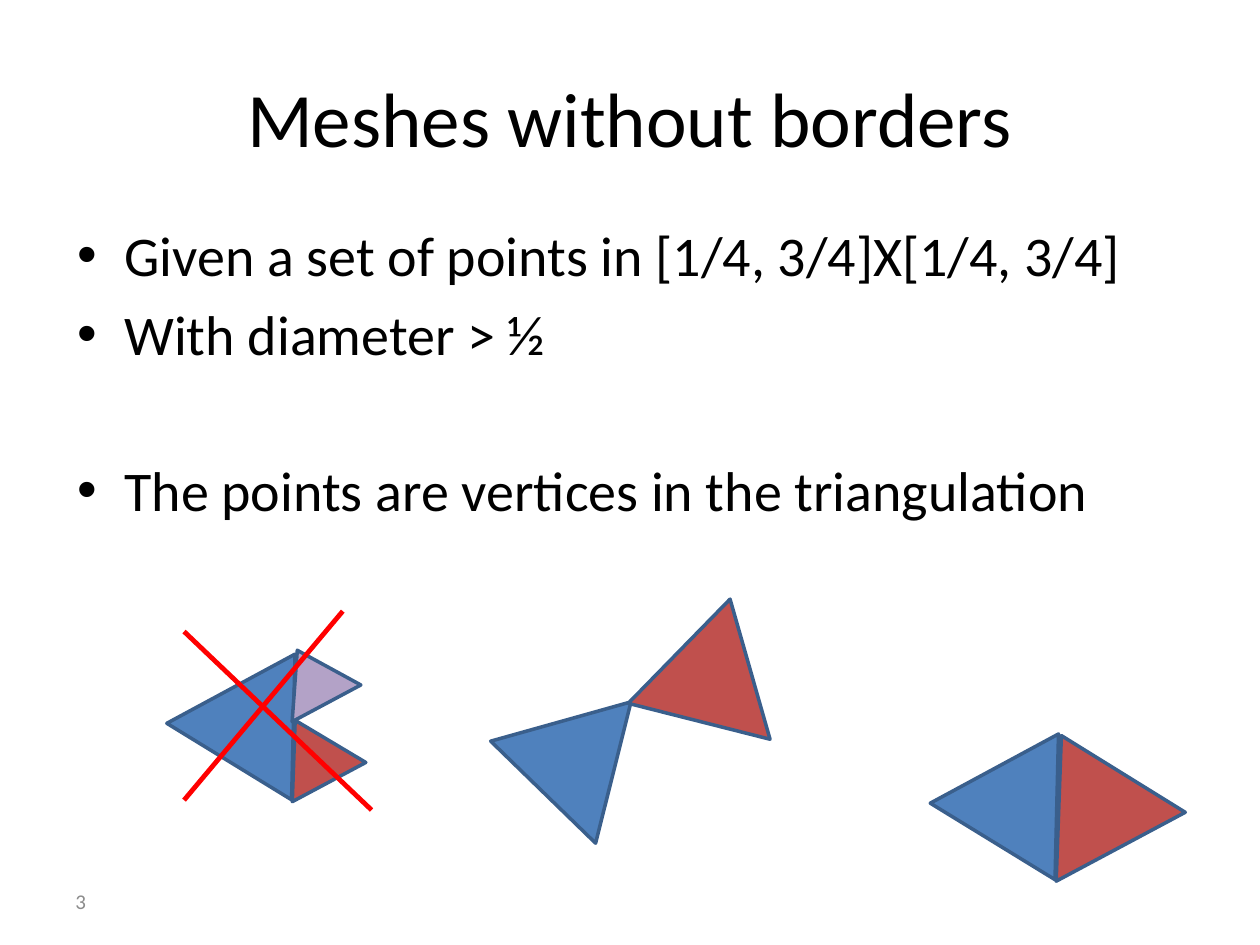
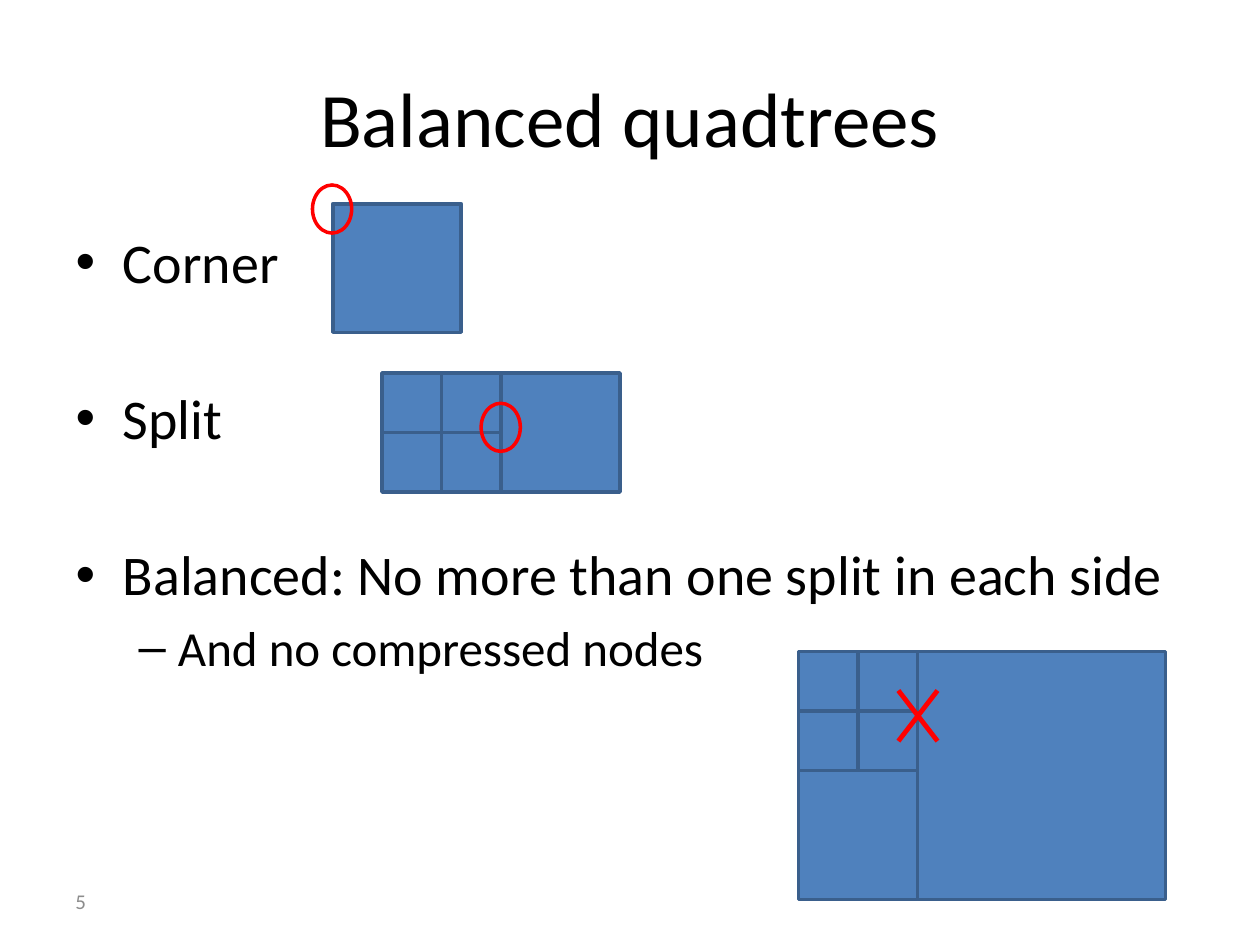
from dataclasses import dataclass
from itertools import product

from lxml import etree
from pptx import Presentation
from pptx.dml.color import RGBColor
from pptx.enum.shapes import MSO_CONNECTOR, MSO_SHAPE
from pptx.enum.text import MSO_ANCHOR, MSO_AUTO_SIZE, PP_ALIGN
from pptx.oxml.ns import qn
from pptx.util import Cm, Pt

STRAIGHT = MSO_CONNECTOR.STRAIGHT
TRIANGLE = MSO_SHAPE.ISOSCELES_TRIANGLE
RECTANGLE = MSO_SHAPE.RECTANGLE
OVAL = MSO_SHAPE.OVAL
MIDDLE = MSO_ANCHOR.MIDDLE
TOP = MSO_ANCHOR.TOP
FIXED = MSO_AUTO_SIZE.NONE
LEFT = PP_ALIGN.LEFT
CENTER = PP_ALIGN.CENTER


@dataclass(frozen=True)
class Theme:
    font: str = "Calibri"
    ink: str = "000000"
    muted: str = "8C8C8C"
    blue: str = "4F81BD"
    red: str = "C0504D"
    purple: str = "B3A2C7"
    outline: str = "3A5F8C"
    mark: str = "FF0000"
    title_size: float = 44
    level_sizes: tuple = (32, 28)
    number_size: float = 12
    outline_width: float = 2
    cross_width: float = 2.75
    section_gap: float = 51


def apply(target, formats):
    for name, value in formats.items():
        setattr(target, name, value)


class Deck:
    def __init__(self, theme):
        self.theme = theme
        self.presentation = Presentation()
        apply(self.presentation, {"slide_width": Cm(25.4), "slide_height": Cm(19.05)})
        self.slide = None

    def start(self, title, number):
        layout = self.presentation.slide_layouts[1]
        self.slide = self.presentation.slides.add_slide(layout)
        heading = self.slide.shapes.title
        self.place(heading, 1.27, 0.76, 22.86, 3.18)
        self.frame(heading, MIDDLE)
        self.add_text(heading.text_frame.paragraphs[0], title,
                      self.theme.title_size, self.theme.ink, CENTER)
        footer = self.slide.shapes.add_textbox(Cm(1.27), Cm(17.65), Cm(5.92), Cm(1.02))
        self.frame(footer, MIDDLE)
        self.add_text(footer.text_frame.paragraphs[0], number,
                      self.theme.number_size, self.theme.muted, LEFT)

    def place(self, item, left, top, width, height):
        apply(item, {"left": Cm(left), "top": Cm(top),
                     "width": Cm(width), "height": Cm(height)})

    def frame(self, item, anchor):
        apply(item.text_frame, {"word_wrap": True, "auto_size": FIXED,
                                "vertical_anchor": anchor})

    def add_text(self, paragraph, text, size, color, align):
        paragraph.alignment = align
        run = paragraph.add_run()
        run.text = text
        apply(run.font, {"name": self.theme.font, "size": Pt(size)})
        run.font.color.rgb = RGBColor.from_string(color)

    def bullets(self, left, top, points):
        body = self.slide.placeholders[1]
        self.place(body, left, top, 22.86, 12.57)
        self.frame(body, TOP)
        for index, (text, level, new_section) in enumerate(points):
            paragraph = (body.text_frame.add_paragraph() if index
                         else body.text_frame.paragraphs[0])
            paragraph.level = level
            if new_section:
                paragraph.space_before = Pt(self.theme.section_gap)
            self.add_text(paragraph, text, self.theme.level_sizes[level],
                          self.theme.ink, LEFT)

    def stroke(self, line, color, width):
        line.color.rgb = RGBColor.from_string(color)
        line.width = Pt(width)

    def shape(self, kind, left, top, width, height, fill, outline, rotation=0):
        item = self.slide.shapes.add_shape(kind, Cm(left), Cm(top), Cm(width), Cm(height))
        item.shadow.inherit = False
        item.rotation = rotation
        if fill:
            item.fill.solid()
            item.fill.fore_color.rgb = RGBColor.from_string(fill)
        else:
            item.fill.background()
        self.stroke(item.line, outline, self.theme.outline_width)
        return item

    def triangle(self, left, top, rotation, fill, width=2.95, height=2.54, apex=0.5):
        item = self.shape(TRIANGLE, left, top, width, height, fill,
                          self.theme.outline, rotation)
        item.adjustments[0] = apex

    def cell(self, left, top, width, height):
        self.shape(RECTANGLE, left, top, width, height,
                   self.theme.blue, self.theme.outline)

    def quad(self, left, top, side):
        for row, column in product(range(2), repeat=2):
            self.cell(left + column * side, top + row * side, side, side)

    def ring(self, left, top):
        self.shape(OVAL, left, top, 0.79, 0.97, None, self.theme.mark)

    def cross(self, *strokes):
        for ends in strokes:
            line = self.slide.shapes.add_connector(STRAIGHT, *map(Cm, ends))
            self.stroke(line.line, self.theme.mark, self.theme.cross_width)
            etree.SubElement(line._element.spPr, qn("a:effectLst"))


def meshes_slide(deck):
    theme = deck.theme
    deck.start("Meshes without borders", "3")
    deck.bullets(1.3, 4.32, [
        ("Given a set of points in [1/4, 3/4]X[1/4, 3/4]", 0, False),
        ("With diameter > ½", 0, False),
        ("The points are vertices in the triangulation", 0, True),
    ])
    left_tilt, right_tilt = 31.5, 331.9
    deck.triangle(19.2, 14.61, left_tilt, theme.blue)
    deck.triangle(20.52, 14.68, right_tilt, theme.red)
    deck.triangle(10.36, 13.79, 44.2, theme.blue)
    deck.triangle(12.93, 12.04, 14.2, theme.red)
    deck.triangle(3.81, 13, left_tilt, theme.blue)
    deck.triangle(5.46, 14.43, right_tilt, theme.red, 1.68, 1.42, 0.49)
    deck.triangle(5.51, 13.03, right_tilt, theme.purple, 1.57, 1.22, 0.49)
    deck.cross((3.71, 12.73, 7.49, 16.33), (3.71, 16.13, 6.91, 12.32))


def quadtrees_slide(deck):
    deck.start("Balanced quadtrees", "5")
    deck.bullets(1.27, 4.45, [
        ("Corner", 0, False),
        ("Split", 0, True),
        ("Balanced: No more than one split in each side", 0, True),
        ("And no compressed nodes", 1, False),
    ])
    deck.cell(6.71, 4.11, 2.59, 2.59)
    deck.ring(6.3, 3.73)

    side = 1.2
    split_left, split_top = 7.7, 7.52
    deck.quad(split_left, split_top, side)
    deck.cell(split_left + 2 * side, split_top, 2 * side, 2 * side)
    deck.ring(9.7, 8.13)

    tree_left, tree_top, node = 16.1, 13.13, 5
    deck.quad(tree_left, tree_top, side)
    deck.cell(tree_left, tree_top + 2 * side, 2 * side, node - 2 * side)
    deck.cell(tree_left + 2 * side, tree_top, node, node)
    left, top, right, bottom = 18.11, 13.92, 18.9, 14.94
    deck.cross((left, top, right, bottom), (left, bottom, right, top))


def main():
    deck = Deck(Theme())
    meshes_slide(deck)
    quadtrees_slide(deck)
    deck.presentation.save("out.pptx")


if __name__ == "__main__":
    main()
